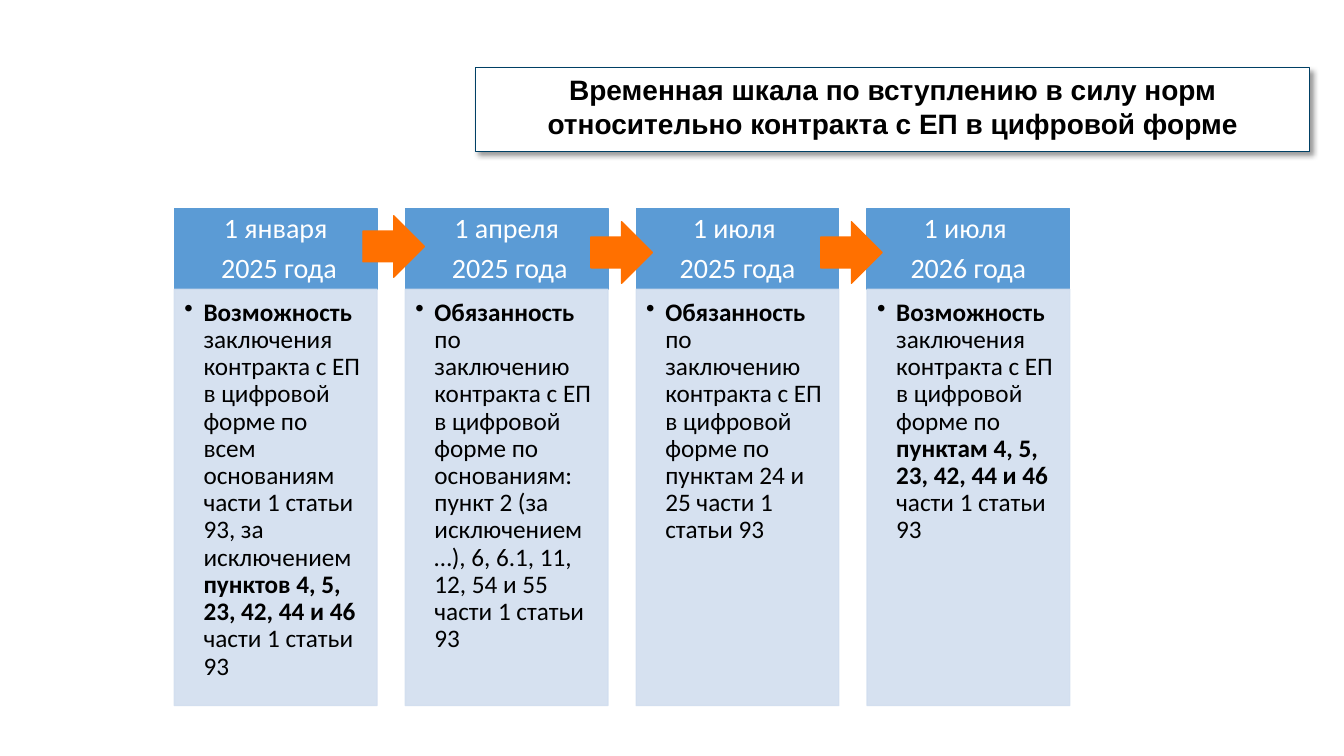
from lxml.etree import SubElement
from pptx import Presentation
from pptx.dml.color import RGBColor
from pptx.enum.shapes import MSO_SHAPE
from pptx.enum.text import MSO_ANCHOR, MSO_AUTO_SIZE, PP_ALIGN
from pptx.oxml.ns import qn
from pptx.util import Pt

PX = 9144  # 100 px to the inch
WHITE = RGBColor(0xFF, 0xFF, 0xFF)
BLACK = RGBColor(0, 0, 0)
NAVY = RGBColor(0x00, 0x40, 0x65)
BLUE = RGBColor(0x5B, 0x9B, 0xD5)
PALE_BLUE = RGBColor(0xD2, 0xDE, 0xEF)
ORANGE = RGBColor(0xFF, 0x70, 0x00)

TITLE = "Временная шкала по вступлению в силу норм относительно контракта с ЕП в цифровой форме"
# Each stage: date lines, then description parts, alternately bold and regular
STAGES = [
    (("1 января", " 2025 года"),
     ("Возможность",
      " заключения контракта с ЕП в цифровой форме по всем основаниям части 1 статьи 93, за исключением ",
      "пунктов 4, 5, 23, 42, 44 и 46", " части 1 статьи 93")),
    (("1 апреля", " 2025 года"),
     ("Обязанность",
      " по заключению контракта с ЕП в цифровой форме по основаниям: пункт 2 (за исключением …), "
      "6, 6.1, 11, 12, 54 и 55 части 1 статьи 93")),
    (("1 июля ", "2025 года"),
     ("Обязанность",
      " по заключению контракта с ЕП в цифровой форме по пунктам 24 и 25 части 1 статьи 93")),
    (("1 июля ", "2026 года"),
     ("Возможность", " заключения контракта с ЕП в цифровой форме по ",
      "пунктам 4, 5, 23, 42, 44 и 46", " части 1 статьи 93")),
]
STAGE_LEFT, STAGE_PITCH, STAGE_WIDTH = 173, 229, 201
DATE_TOP, DATE_HEIGHT, DESCRIPTION_HEIGHT = 207, 80, 413
ARROW_SIZE = 61
ARROW_POSITIONS = [(360, 214), (586, 220), (814, 220)]


def place(shape, left, top, width, height):
    shape.left, shape.top = left * PX, top * PX
    shape.width, shape.height = width * PX, height * PX


def paint(shape, fill, line, line_width):
    shape.fill.solid()
    shape.fill.fore_color.rgb = fill
    shape.line.color.rgb = line
    shape.line.width = Pt(line_width)
    shape.shadow.inherit = False


def add_block(slide, preset, box, color):
    block = slide.shapes.add_shape(preset, *(length * PX for length in box))
    paint(block, color, color, 1)
    return block


def set_margins(frame, left, top, right, bottom):
    frame.margin_left, frame.margin_top = left * PX, top * PX
    frame.margin_right, frame.margin_bottom = right * PX, bottom * PX


def format_paragraph(paragraph, font_name, size, color, align, spacing=None, after=0):
    paragraph.font.name = font_name
    paragraph.font.size = Pt(size)
    paragraph.font.color.rgb = color
    paragraph.alignment = align
    paragraph.line_spacing = spacing
    paragraph.space_after = Pt(after)


def add_alpha(shape, percent):
    """Make the fill and line of the shape partly transparent."""
    for color in shape._element.spPr.iter(qn("a:srgbClr")):
        SubElement(color, qn("a:alpha"), val=str(percent * 1000))


def add_drop_shadow(shape):
    effects = shape._element.spPr.find(qn("a:effectLst"))
    shadow = SubElement(effects, qn("a:outerShdw"), blurRad=str(Pt(4)), dist=str(Pt(3)),
                        dir="2700000", algn="tl", rotWithShape="0")
    color = SubElement(shadow, qn("a:srgbClr"), val=str(BLACK))
    SubElement(color, qn("a:alpha"), val="40000")


def add_bullet(paragraph, indent):
    properties = paragraph._p.get_or_add_pPr()
    properties.set("marL", str(indent * PX))
    properties.set("indent", str(-indent * PX))
    bullet = properties.makeelement(qn("a:buChar"), {"char": "•"})
    defaults = properties.find(qn("a:defRPr"))
    defaults.addprevious(bullet)


def add_title(slide):
    title = slide.shapes.title
    place(title, 472, 67, 827, 77)
    paint(title, WHITE, NAVY, 0.75)
    add_drop_shadow(title)
    frame = title.text_frame
    frame.text = TITLE
    frame.word_wrap = True
    frame.auto_size = MSO_AUTO_SIZE.SHAPE_TO_FIT_TEXT
    frame.vertical_anchor = MSO_ANCHOR.TOP
    paragraph = frame.paragraphs[0]
    format_paragraph(paragraph, "Arial", 20, BLACK, PP_ALIGN.CENTER)
    paragraph.font.bold = True


def add_date(slide, left, date_lines):
    box = (left, DATE_TOP, STAGE_WIDTH, DATE_HEIGHT)
    frame = add_block(slide, MSO_SHAPE.RECTANGLE, box, BLUE).text_frame
    frame.text = "\n".join(date_lines)
    frame.word_wrap = True
    frame.vertical_anchor = MSO_ANCHOR.MIDDLE
    set_margins(frame, 16, 9, 16, 9)
    for paragraph in frame.paragraphs:
        format_paragraph(paragraph, "Calibri", 20, WHITE, PP_ALIGN.CENTER, 0.9, 7)


def add_description(slide, left, parts):
    box = (left, DATE_TOP + DATE_HEIGHT, STAGE_WIDTH, DESCRIPTION_HEIGHT)
    panel = add_block(slide, MSO_SHAPE.RECTANGLE, box, PALE_BLUE)
    add_alpha(panel, 90)
    frame = panel.text_frame
    frame.word_wrap = True
    frame.vertical_anchor = MSO_ANCHOR.TOP
    set_margins(frame, 10, 10, 14, 16)
    paragraph = frame.paragraphs[0]
    format_paragraph(paragraph, "Calibri", 18, BLACK, PP_ALIGN.LEFT, 0.9, 3)
    add_bullet(paragraph, 19)
    for index, part in enumerate(parts):
        run = paragraph.add_run()
        run.text = part
        run.font.bold = index % 2 == 0


def main():
    presentation = Presentation()
    presentation.slide_width, presentation.slide_height = 1333 * PX, 750 * PX
    slide = presentation.slides.add_slide(presentation.slide_layouts[5])
    add_title(slide)
    for index, (date_lines, parts) in enumerate(STAGES):
        left = STAGE_LEFT + index * STAGE_PITCH
        add_date(slide, left, date_lines)
        add_description(slide, left, parts)
    for left, top in ARROW_POSITIONS:
        add_block(slide, MSO_SHAPE.RIGHT_ARROW, (left, top, ARROW_SIZE, ARROW_SIZE), ORANGE)
    presentation.save("out.pptx")


if __name__ == "__main__":
    main()
